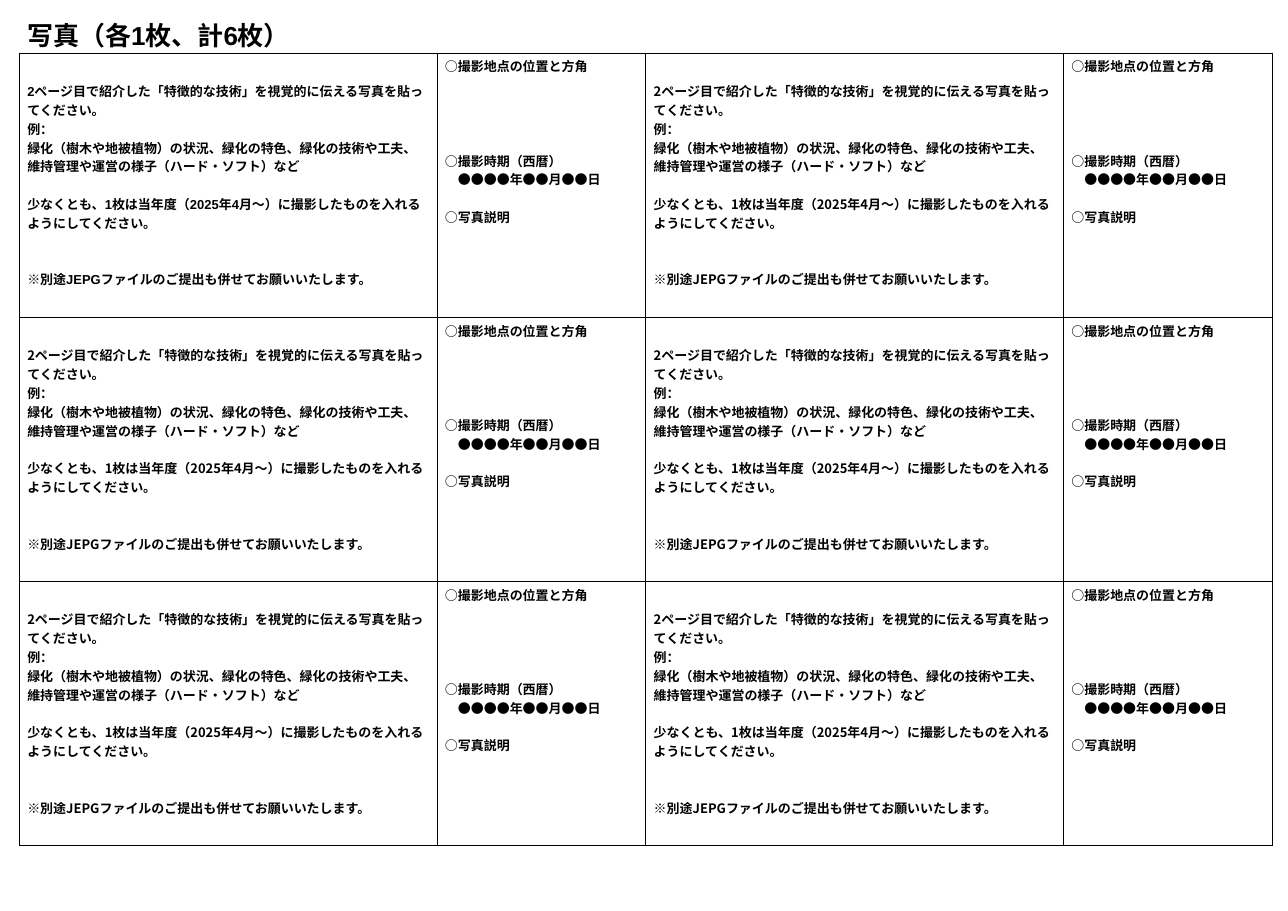
from lxml.etree import SubElement
from pptx import Presentation
from pptx.dml.color import RGBColor
from pptx.enum.text import MSO_ANCHOR
from pptx.oxml import parse_xml
from pptx.oxml.ns import nsdecls, qn
from pptx.util import Inches, Pt

PAGE_WIDTH, PAGE_HEIGHT = 16.53, 11.69
COLUMNS = [5.36, 2.68] * 2
HEADING_HEIGHT, PHOTO_HEIGHT, PHOTO_ROWS = 0.49, 3.39, 3
LATIN, JAPANESE = "Arial", "Noto Sans CJK JP"
BLACK = "000000"
LINE = 17.4  # height of one 12 pt line, in points

HEADING = [("写真（各1枚、計6枚）", 0)]

# Each entry: text, empty lines above it
GUIDANCE = [
    ("2ページ目で紹介した「特徴的な技術」を視覚的に伝える写真を貼ってください。", 0),
    ("例：", 0),
    ("緑化（樹木や地被植物）の状況、緑化の特色、緑化の技術や工夫、"
     "維持管理や運営の様子（ハード・ソフト）など", 0),
    ("少なくとも、1枚は当年度（2025年4月～）に撮影したものを入れるようにしてください。", 1),
    ("※別途JEPGファイルのご提出も併せてお願いいたします。", 2),
]
CAPTION = [
    ("○撮影地点の位置と方角", 0),
    ("○撮影時期（西暦）", 4),
    ("　●●●●年●●月●●日", 0),
    ("○写真説明", 1),
]


def color(hex_code):
    return RGBColor.from_string(hex_code)


def set_borders(cell, visible):
    """Draw the sides named in visible (of L, R, T, B) and hide the others."""
    properties = cell._tc.get_or_add_tcPr()
    for position, side in enumerate("LRTB"):
        paint = (f'<a:solidFill><a:srgbClr val="{BLACK}"/></a:solidFill>'
                 if side in visible else "<a:noFill/>")
        border = parse_xml(f'<a:ln{side} {nsdecls("a")} w="{Pt(1)}">{paint}</a:ln{side}>')
        properties.insert(position, border)


def write_cell(cell, entries, size=12, latin=LATIN, **layout):
    for attribute, value in layout.items():
        setattr(cell, attribute, value)
    frame = cell.text_frame
    for index, (text, empty_lines) in enumerate(entries):
        paragraph = frame.paragraphs[0] if index == 0 else frame.add_paragraph()
        paragraph.space_before = Pt(empty_lines * LINE)
        run = paragraph.add_run()
        run.text = text
        for attribute, value in {"name": latin, "size": Pt(size), "bold": True}.items():
            setattr(run.font, attribute, value)
        run.font.color.rgb = color(BLACK)
        SubElement(run.font._element, qn("a:ea"), typeface=JAPANESE)


def add_photo_sheet(slide):
    heights = [HEADING_HEIGHT] + [PHOTO_HEIGHT] * PHOTO_ROWS
    sheet = slide.shapes.add_table(
        len(heights), len(COLUMNS), Inches(0.25), Inches(0.19),
        Inches(sum(COLUMNS)), Inches(sum(heights))).table
    sheet.first_row = sheet.horz_banding = False
    for column, width in zip(sheet.columns, COLUMNS):
        column.width = Inches(width)
    for row, height in zip(sheet.rows, heights):
        row.height = Inches(height)
    for row_number, row in enumerate(sheet.rows):
        for cell in row.cells:
            cell.fill.background()
            set_borders(cell, "LRTB" if row_number else "B")
    return sheet


def main():
    deck = Presentation()
    deck.slide_width, deck.slide_height = Inches(PAGE_WIDTH), Inches(PAGE_HEIGHT)
    slide = deck.slides.add_slide(deck.slide_layouts[6])
    sheet = add_photo_sheet(slide)

    # Heading across all columns
    heading = sheet.cell(0, 0)
    heading.merge(sheet.cell(0, len(COLUMNS) - 1))
    write_cell(heading, HEADING, size=24, margin_top=0, margin_bottom=0,
               vertical_anchor=MSO_ANCHOR.BOTTOM)

    # Photo areas, each with its caption on the right
    for row in range(1, PHOTO_ROWS + 1):
        for column in range(0, len(COLUMNS), 2):
            is_first = (row, column) == (1, 0)
            write_cell(sheet.cell(row, column), GUIDANCE,
                       latin=LATIN if is_first else JAPANESE,
                       vertical_anchor=MSO_ANCHOR.MIDDLE)
            write_cell(sheet.cell(row, column + 1), CAPTION,
                       vertical_anchor=MSO_ANCHOR.TOP)

    deck.save("out.pptx")


if __name__ == "__main__":
    main()
